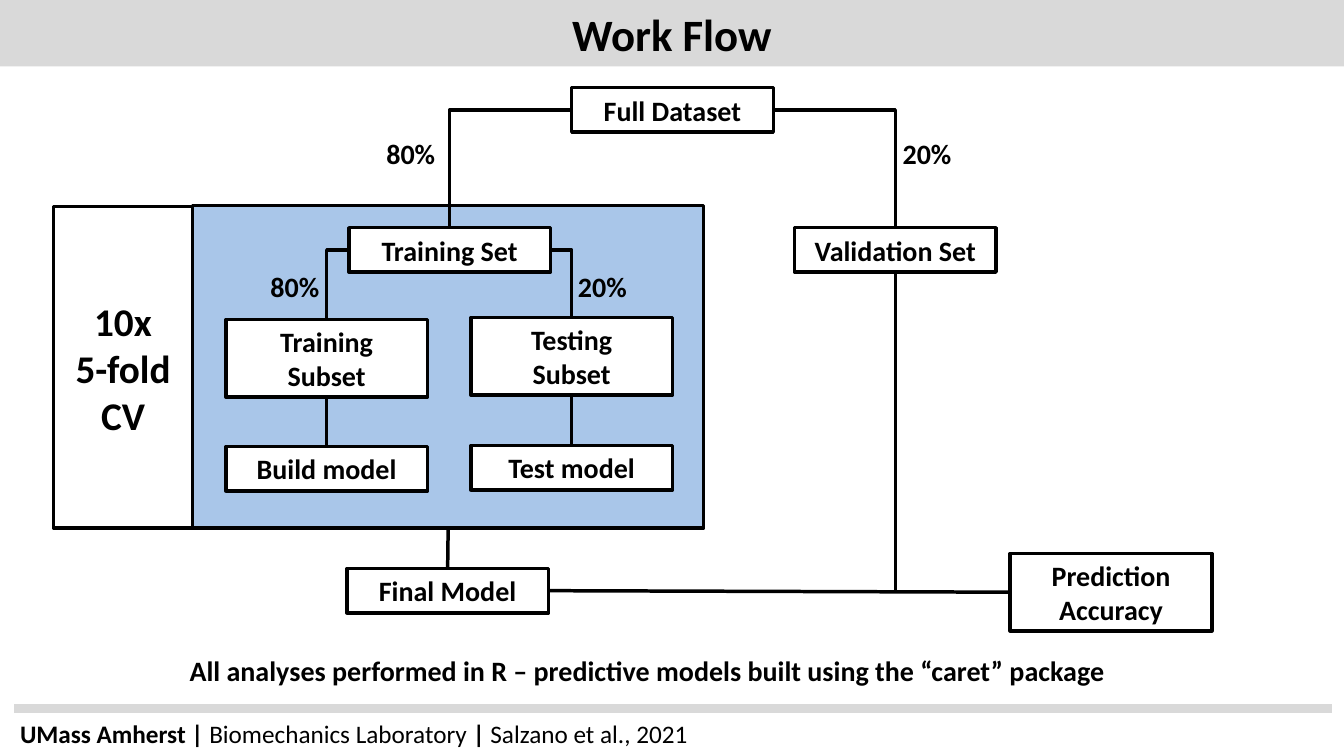
from lxml import etree
from pptx import Presentation
from pptx.dml.color import RGBColor
from pptx.enum.shapes import MSO_CONNECTOR as LINK, MSO_SHAPE as SHAPE
from pptx.enum.text import MSO_ANCHOR as ANCHOR, PP_ALIGN as ALIGN
from pptx.oxml.ns import qn
from pptx.util import Inches, Pt


def color(fmt, value):
    """Give a fill or font a solid colour from a hex string."""
    if hasattr(fmt, "solid"):
        fmt.solid()
        fmt = fmt.fore_color
    else:
        fmt = fmt.color
    fmt.rgb = RGBColor.from_string(value)


def write(sp, paragraphs, size, align=ALIGN.CENTER):
    """Fill a shape with paragraphs, each a list of (text, bold) runs."""
    tf = sp.text_frame
    tf.word_wrap = True
    tf.vertical_anchor = ANCHOR.MIDDLE
    for i, runs in enumerate(paragraphs):
        p = tf.paragraphs[0] if i == 0 else tf.add_paragraph()
        p.alignment = align
        for text, bold in runs:
            r = p.add_run()
            r.text = text
            for name, value in {"name": "Calibri", "size": Pt(size), "bold": bold}.items():
                setattr(r.font, name, value)
            color(r.font, "000000")


prs = Presentation()
prs.slide_width, prs.slide_height = Inches(13.33), Inches(7.5)
s = prs.slides.add_slide(prs.slide_layouts[5])

# Title band
title = s.shapes.title
frame = {"left": 0, "top": 0, "width": 13.33, "height": 0.66}
for name, value in frame.items():
    setattr(title, name, Inches(value))
color(title.fill, "D9D9D9")
write(title, [[("Work Flow", True)]], 32)

# Boxes: left, top, width, height, fill, text size, lines
BOX_W, ONE, TWO = 2, 0.44, 0.77
boxes = {
    "panel": (1.91, 2.04, 5.07, 3.2, "558ED5", 20, []),
    "cv": (0.53, 2.05, 1.38, 3.19, None, 28, ["10x", "5-fold", "CV"]),
    "full": (5.67, 0.87, BOX_W, ONE, "FFFFFF", 20, ["Full Dataset"]),
    "validation": (7.88, 2.26, BOX_W, ONE, "FFFFFF", 20, ["Validation Set"]),
    "training": (3.46, 2.26, BOX_W, ONE, "FFFFFF", 20, ["Training Set"]),
    "train_sub": (2.24, 3.17, BOX_W, TWO, "FFFFFF", 20, ["Training", "Subset"]),
    "test_sub": (4.67, 3.15, BOX_W, TWO, "FFFFFF", 20, ["Testing", "Subset"]),
    "build": (2.24, 4.43, BOX_W, ONE, "FFFFFF", 20, ["Build model"]),
    "test": (4.67, 4.42, BOX_W, ONE, "FFFFFF", 20, ["Test model"]),
    "final": (3.44, 5.64, BOX_W, ONE, "FFFFFF", 20, ["Final Model"]),
    "accuracy": (10.02, 5.49, BOX_W, TWO, "FFFFFF", 20, ["Prediction Accuracy"]),
}
shapes = {}
for key, (x, y, w, h, fill, size, lines) in boxes.items():
    sp = s.shapes.add_shape(SHAPE.RECTANGLE, *map(Inches, (x, y, w, h)))
    sp.shadow.inherit = False
    if fill:
        color(sp.fill, fill)
    else:
        sp.fill.background()
    color(sp.line.fill, "000000")
    sp.line.width = Pt(2.5)
    write(sp, [[(line, True)] for line in lines], size)
    shapes[key] = sp

panel_color = shapes["panel"].fill._xPr.find(qn("a:solidFill"))[0]
etree.SubElement(panel_color, qn("a:alpha")).set("val", "50000")

# Links: kind, start box and side, end box and side (0 top, 1 left, 2 bottom, 3 right)
links = [
    (LINK.ELBOW, "full", 1, "training", 0),
    (LINK.ELBOW, "full", 3, "validation", 0),
    (LINK.ELBOW, "training", 1, "train_sub", 0),
    (LINK.ELBOW, "training", 3, "test_sub", 0),
    (LINK.STRAIGHT, "train_sub", 2, "build", 0),
    (LINK.STRAIGHT, "test_sub", 2, "test", 0),
    (LINK.STRAIGHT, "panel", 2, "final", 0),
    (LINK.STRAIGHT, "final", 3, "accuracy", 1),
]
connectors = []
for kind, start, start_side, end, end_side in links:
    link = s.shapes.add_connector(kind, 0, 0, 0, 0)
    link.begin_connect(shapes[start], start_side)
    link.end_connect(shapes[end], end_side)
    if kind == LINK.ELBOW:
        link._element.spPr.find(qn("a:prstGeom")).set("prst", "bentConnector2")
    connectors.append((link, "000000", 2.5))

drop = s.shapes.add_connector(LINK.STRAIGHT, *map(Inches, (8.88, 2.7, 8.88, 5.86)))
drop.begin_connect(shapes["validation"], 2)
rule = s.shapes.add_connector(LINK.STRAIGHT, *map(Inches, (0.14, 7.03, 13.21, 7.03)))
connectors += [(drop, "000000", 2.5), (rule, "D9D9D9", 6)]
for link, line_color, width in connectors:
    color(link.line.fill, line_color)
    link.line.width = Pt(width)
    etree.SubElement(link._element.spPr, qn("a:effectLst"))

# Split labels, note and footer
note = "All analyses performed in R – predictive models built using the “caret” package"
footer = [("UMass Amherst | ", True), ("Biomechanics Laboratory ", False),
          ("| ", True), ("Salzano et al., 2021", False)]
texts = [
    (3.71, 1.3, 0.73, 0.44, [("80%", True)], 20, ALIGN.CENTER),
    (8.83, 1.3, 0.73, 0.44, [("20%", True)], 20, ALIGN.CENTER),
    (2.56, 2.62, 0.73, 0.44, [("80%", True)], 20, ALIGN.CENTER),
    (5.61, 2.62, 0.73, 0.44, [("20%", True)], 20, ALIGN.CENTER),
    (0.31, 6.43, 12.22, 0.44, [(note, True)], 20, ALIGN.CENTER),
    (0.1, 7.08, 8.98, 0.4, footer, 18, ALIGN.LEFT),
]
for x, y, w, h, runs, size, align in texts:
    write(s.shapes.add_textbox(*map(Inches, (x, y, w, h))), [runs], size, align)

prs.save("out.pptx")
